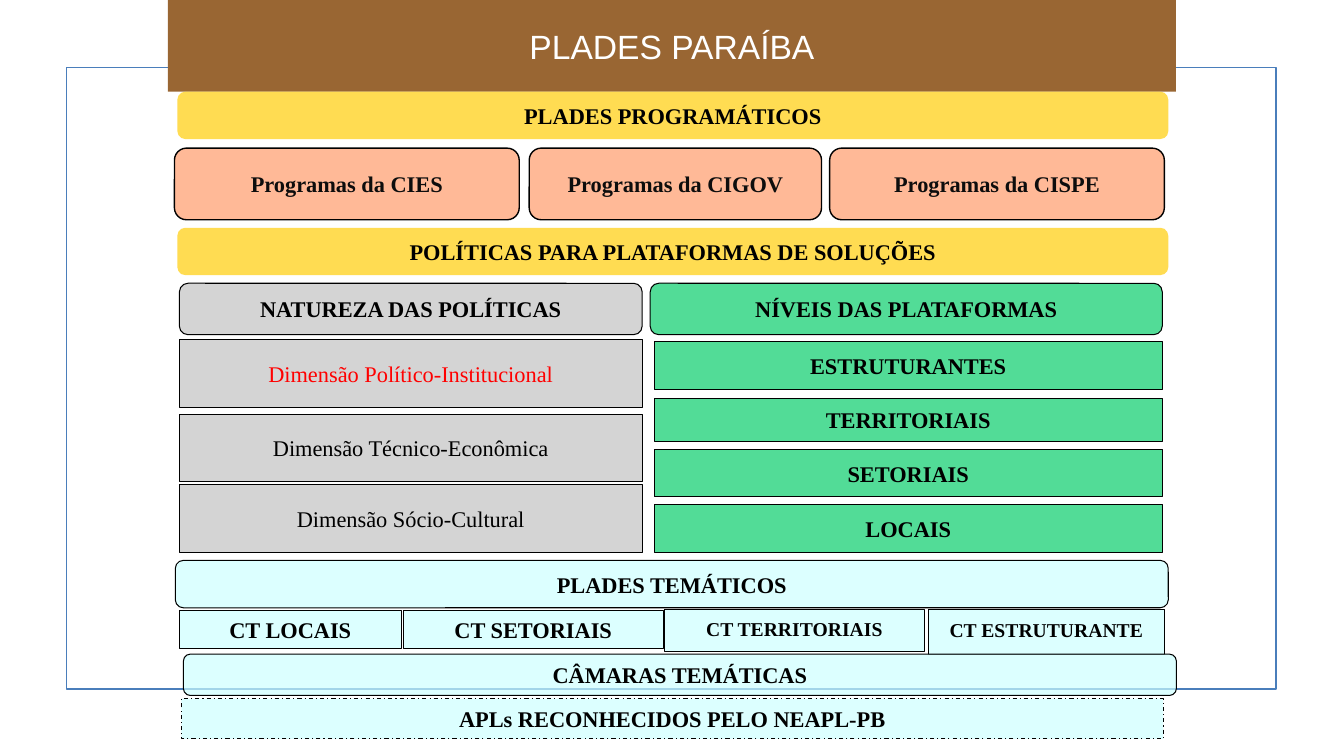
from dataclasses import dataclass, replace

import pptx
import pptx.dml.color
import pptx.enum.dml
import pptx.enum.shapes
import pptx.enum.text
import pptx.oxml.ns
import pptx.util
from lxml import etree

WIDE = pptx.util.Inches(13.33)
HIGH = pptx.util.Inches(7.5)
RECT = pptx.enum.shapes.MSO_SHAPE.RECTANGLE
ROUND = pptx.enum.shapes.MSO_SHAPE.ROUNDED_RECTANGLE


@dataclass(frozen=True)
class Theme:
    brown: str = "996633"
    gold: str = "FFCC00"
    peach: str = "FF9966"
    gray: str = "BFBFBF"
    green: str = "00CC66"
    ice: str = "CCFFFF"
    blue: str = "4A7EBB"
    black: str = "000000"
    soft: str = "0D0D0D"
    red: str = "FF0000"
    white: str = "FFFFFF"
    head: str = "Arial"
    body: str = "Times New Roman"
    large: int = 24
    normal: int = 16
    small: int = 14


THEME = Theme()


@dataclass(frozen=True)
class Look:
    fill: str
    form: int = RECT
    line: float = 0.75
    ink: str = THEME.black
    size: int = THEME.normal
    bold: bool = True
    alpha: int = 68
    tight: bool = False
    dashed: bool = False


@dataclass(frozen=True)
class Area:
    """A place on the slide, in percent of its width and height."""
    left: float
    top: float
    wide: float
    high: float


@dataclass(frozen=True)
class Box:
    text: str
    area: Area
    look: Look


GOLD = Look(THEME.gold, ROUND, line=0)
PEACH = Look(THEME.peach, ROUND, line=1, ink=THEME.soft)
GRAY = Look(THEME.gray, bold=False, alpha=67)
GREEN = Look(THEME.green)
ICE = Look(THEME.ice)
TIGHT = replace(ICE, size=THEME.small, tight=True)

FRAME = Area(4.95, 8.93, 90, 82.27)
TITLE = Area(12.5, 0, 75, 12.13)

BOXES = [
    *(Box(text, Area(13.2, top, 73.73, 6.27), GOLD) for text, top in [
        ("PLADES PROGRAMÁTICOS", 12.13),
        ("POLÍTICAS PARA PLATAFORMAS DE SOLUÇÕES", 30.13),
    ]),
    *(Box(f"Programas da {name}", Area(left, 19.6, wide, 9.47), PEACH)
      for name, left, wide in [
        ("CIES", 12.98, 25.65),
        ("CIGOV", 39.38, 21.75),
        ("CISPE", 61.73, 24.9),
    ]),
    Box("NATUREZA DAS POLÍTICAS", Area(13.35, 37.47, 34.43, 6.8),
        replace(GRAY, form=ROUND, bold=True)),
    Box("NÍVEIS DAS PLATAFORMAS", Area(48.38, 37.47, 38.1, 6.8),
        replace(GREEN, form=ROUND)),
    *(Box(f"Dimensão {name}", Area(13.35, top, 34.43, 8.93),
          replace(GRAY, ink=ink)) for name, top, ink in [
        ("Político-Institucional", 44.93, THEME.red),
        ("Técnico-Econômica", 54.8, THEME.black),
        ("Sócio-Cultural", 64.13, THEME.black),
    ]),
    *(Box(text, Area(48.68, top, 37.8, high), GREEN) for text, top, high in [
        ("ESTRUTURANTES", 45.2, 6.27),
        ("TERRITORIAIS", 52.67, 5.73),
        ("SETORIAIS", 59.47, 6.27),
        ("LOCAIS", 66.8, 6.27),
    ]),
    Box("PLADES TEMÁTICOS", Area(13.05, 74.13, 73.88, 6.27),
        replace(ICE, form=ROUND)),
    *(Box(f"CT {name}", Area(left, top, wide, high), look)
      for name, left, top, wide, high, look in [
        ("LOCAIS", 13.35, 80.8, 16.5, 4.93, ICE),
        ("SETORIAIS", 30, 80.8, 19.35, 4.93, ICE),
        ("TERRITORIAIS", 49.43, 80.67, 19.35, 5.47, TIGHT),
        ("ESTRUTURANTE", 69.08, 80.67, 17.55, 5.87, TIGHT),
    ]),
    Box("CÂMARAS TEMÁTICAS", Area(13.65, 86.53, 73.88, 5.47),
        replace(ICE, form=ROUND)),
    Box("APLs RECONHECIDOS PELO NEAPL-PB", Area(13.5, 92.4, 73.05, 5.33),
        replace(ICE, dashed=True)),
]


def tint(code: str) -> pptx.dml.color.RGBColor:
    return pptx.dml.color.RGBColor.from_string(code)


def place(shape, area: Area) -> None:
    shape.left, shape.width = (int(WIDE * n / 100) for n in (area.left, area.wide))
    shape.top, shape.height = (int(HIGH * n / 100) for n in (area.top, area.high))


def paint(shape, color: str, alpha: int = 100) -> None:
    """Fill the shape, with alpha as percent of opacity."""
    shape.fill.solid()
    shape.fill.fore_color.rgb = tint(color)
    if alpha < 100:
        name = pptx.oxml.ns.qn("a:srgbClr")
        node = next(shape.element.spPr.iter(name))
        etree.SubElement(node, pptx.oxml.ns.qn("a:alpha"), val=str(alpha * 1000))


def outline(shape, color: str, width: float) -> None:
    if not width:
        shape.line.fill.background()
        return
    shape.line.color.rgb = tint(color)
    shape.line.width = pptx.util.Pt(width)


def write(shape, text: str, face: str, size: int, ink: str, bold: bool) -> None:
    frame = shape.text_frame
    frame.text = text
    frame.word_wrap = True
    frame.auto_size = pptx.enum.text.MSO_AUTO_SIZE.NONE
    frame.vertical_anchor = pptx.enum.text.MSO_ANCHOR.MIDDLE
    para = frame.paragraphs[0]
    para.alignment = pptx.enum.text.PP_ALIGN.CENTER
    para.font.name = face
    para.font.size = pptx.util.Pt(size)
    para.font.color.rgb = tint(ink)
    para.font.bold = bold


def draw(slide, box: Box) -> None:
    look = box.look
    shape = slide.shapes.add_shape(look.form, 0, 0, 0, 0)
    shape.shadow.inherit = False
    place(shape, box.area)
    paint(shape, look.fill, look.alpha)
    outline(shape, THEME.black, look.line)
    if look.dashed:
        shape.line.dash_style = pptx.enum.dml.MSO_LINE.DASH_DOT
    write(shape, box.text, THEME.body, look.size, look.ink, look.bold)
    if look.tight:
        frame = shape.text_frame
        frame.margin_left = frame.margin_right = pptx.util.Inches(0.02)
        frame.margin_top = pptx.util.Inches(0.01)


def main() -> None:
    deck = pptx.Presentation()
    deck.slide_width, deck.slide_height = WIDE, HIGH
    slide = deck.slides.add_slide(deck.slide_layouts.get_by_name("Title Only"))

    title = slide.shapes.title
    place(title, TITLE)
    paint(title, THEME.brown)
    write(title, "PLADES PARAÍBA", THEME.head, THEME.large, THEME.white, False)

    border = slide.shapes.add_shape(RECT, 0, 0, 0, 0)
    border.shadow.inherit = False
    place(border, FRAME)
    border.fill.background()
    outline(border, THEME.blue, 1.25)
    title.element.addprevious(border.element)

    for box in BOXES:
        draw(slide, box)
    deck.save("out.pptx")


if __name__ == "__main__":
    main()
